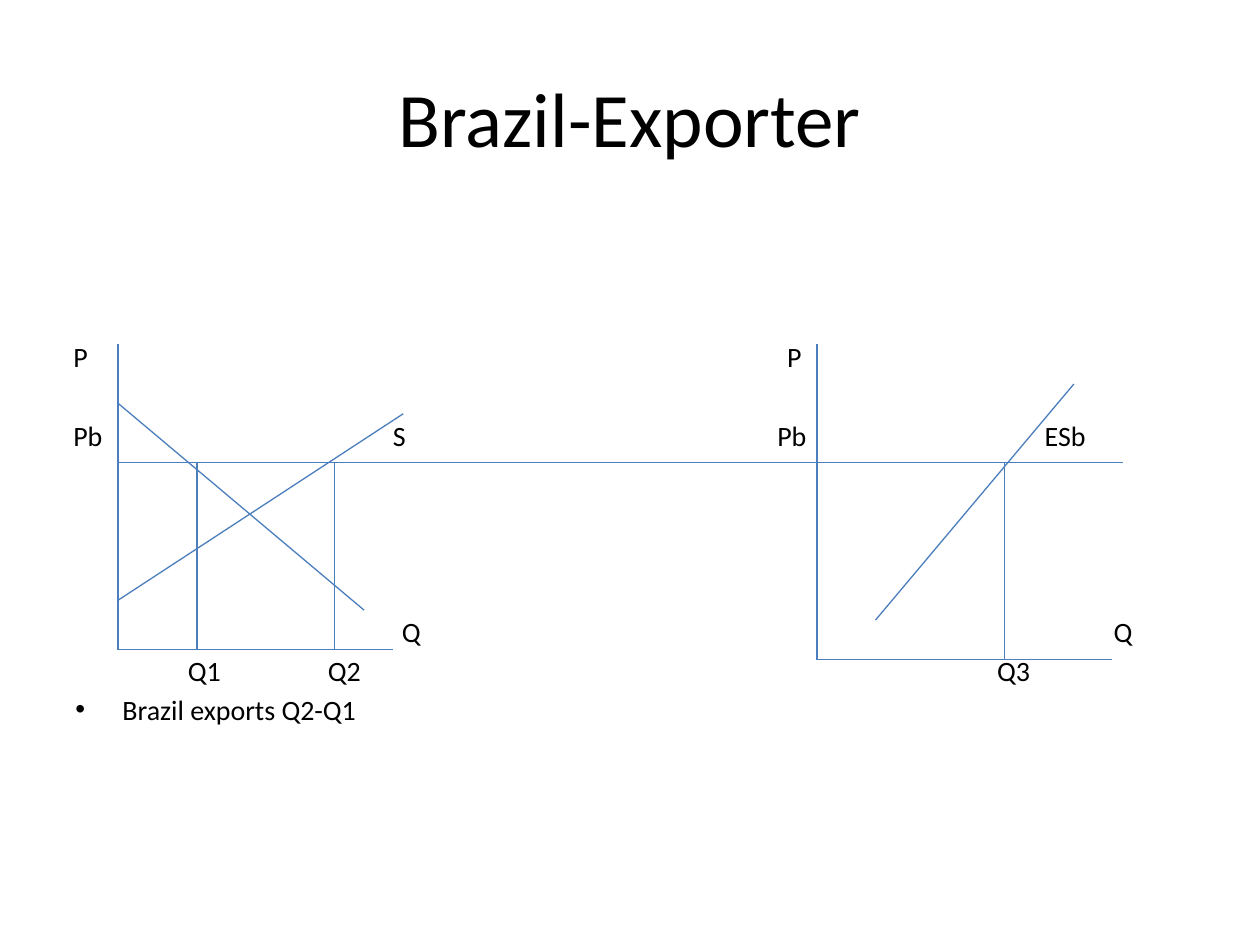
from dataclasses import dataclass

from lxml.etree import SubElement
from pptx import Presentation
from pptx.dml.color import RGBColor
from pptx.enum.shapes import MSO_CONNECTOR
from pptx.enum.text import MSO_ANCHOR, PP_ALIGN
from pptx.oxml.ns import qn
from pptx.util import Cm, Pt


@dataclass(frozen=True)
class Theme:
    font: str = "Calibri"
    text: RGBColor = RGBColor(0x00, 0x00, 0x00)
    line: RGBColor = RGBColor(0x4B, 0x7E, 0xBC)
    title_size: float = 44
    label_size: float = 16
    line_width: float = 0.75


class DiagramSlide:
    """Holds the theme and the slide being drawn; lengths are centimetres."""

    def __init__(self, presentation, theme):
        self.theme = theme
        self.slide = presentation.slides.add_slide(presentation.slide_layouts[5])

    def set_text(self, shape, text, size, alignment):
        frame = shape.text_frame
        frame.text = text
        frame.word_wrap = True
        frame.vertical_anchor = MSO_ANCHOR.MIDDLE
        paragraph = frame.paragraphs[0]
        paragraph.alignment = alignment
        style = {"name": self.theme.font, "size": Pt(size)}
        for name, value in style.items():
            setattr(paragraph.runs[0].font, name, value)
        paragraph.runs[0].font.color.rgb = self.theme.text
        return paragraph

    def title(self, text, left, top, width, height):
        shape = self.slide.shapes.title
        place = {"left": left, "top": top, "width": width, "height": height}
        for name, value in place.items():
            setattr(shape, name, Cm(value))
        self.set_text(shape, text, self.theme.title_size, PP_ALIGN.CENTER)

    def label(self, text, left, middle, width=1.6, height=0.8):
        shape = self.slide.shapes.add_textbox(
            Cm(left), Cm(middle - height / 2), Cm(width), Cm(height))
        for side in ("left", "top", "right", "bottom"):
            setattr(shape.text_frame, f"margin_{side}", 0)
        return self.set_text(shape, text, self.theme.label_size, PP_ALIGN.LEFT)

    def bullet(self, text, left, middle, width, indent=0.95):
        paragraph = self.label(text, left, middle, width)
        properties = paragraph._p.get_or_add_pPr()
        properties.set("marL", str(Cm(indent)))
        properties.set("indent", str(-Cm(indent)))
        SubElement(properties, qn("a:buFont"), typeface="Arial")
        SubElement(properties, qn("a:buChar"), char="•")

    def line(self, start_x, start_y, end_x, end_y):
        connector = self.slide.shapes.add_connector(
            MSO_CONNECTOR.STRAIGHT,
            Cm(start_x), Cm(start_y), Cm(end_x), Cm(end_y))
        connector.line.color.rgb = self.theme.line
        connector.line.width = Pt(self.theme.line_width)
        SubElement(connector._element.spPr, qn("a:effectLst"))


def main():
    presentation = Presentation()
    presentation.slide_width = Cm(25.4)
    presentation.slide_height = Cm(19.05)
    diagram = DiagramSlide(presentation, Theme())
    diagram.title("Brazil-Exporter", 1.27, 0.76, 22.86, 3.18)

    # Shared levels of the two graphs
    axis_top, price = 6.94, 9.32
    home_axis, home_base = 2.38, 13.1
    export_axis, export_base = 16.47, 13.3
    q1, q2, q3 = 3.97, 6.74, 20.25

    # Axes
    for axis, base, right in ((home_axis, home_base, 7.93),
                              (export_axis, export_base, 22.42)):
        diagram.line(axis, axis_top, axis, base)
        diagram.line(axis, base, right, base)

    # Price level across both graphs
    diagram.line(home_axis, price, 22.63, price)

    # Home supply, home demand and export supply
    diagram.line(home_axis, 12.1, 8.13, 8.34)
    diagram.line(home_axis, 8.13, 7.34, 12.3)
    diagram.line(17.65, 12.5, 21.65, 7.74)

    # Drops from the price level to each quantity
    for quantity, base in ((q1, home_base), (q2, home_base), (q3, export_base)):
        diagram.line(quantity, price, quantity, base)

    # Labels stand on evenly spaced rows: row number -> (text, left)
    first_row, row_step = 7.19, 0.79
    label_rows = {
        0: (("P", 1.48), ("P", 15.87)),
        2: (("Pb", 1.48), ("S", 7.92), ("Pb", 15.67), ("ESb", 21.06)),
        7: (("Q", 8.1), ("Q", 22.45)),
        8: (("Q1", 3.79), ("Q2", 6.61), ("Q3", 20.1)),
    }
    for row, labels in label_rows.items():
        for text, left in labels:
            diagram.label(text, left, first_row + row * row_step)

    # Conclusion
    diagram.bullet("Brazil exports Q2-Q1", 1.52, first_row + 9 * row_step, 10)

    presentation.save("out.pptx")


if __name__ == "__main__":
    main()
